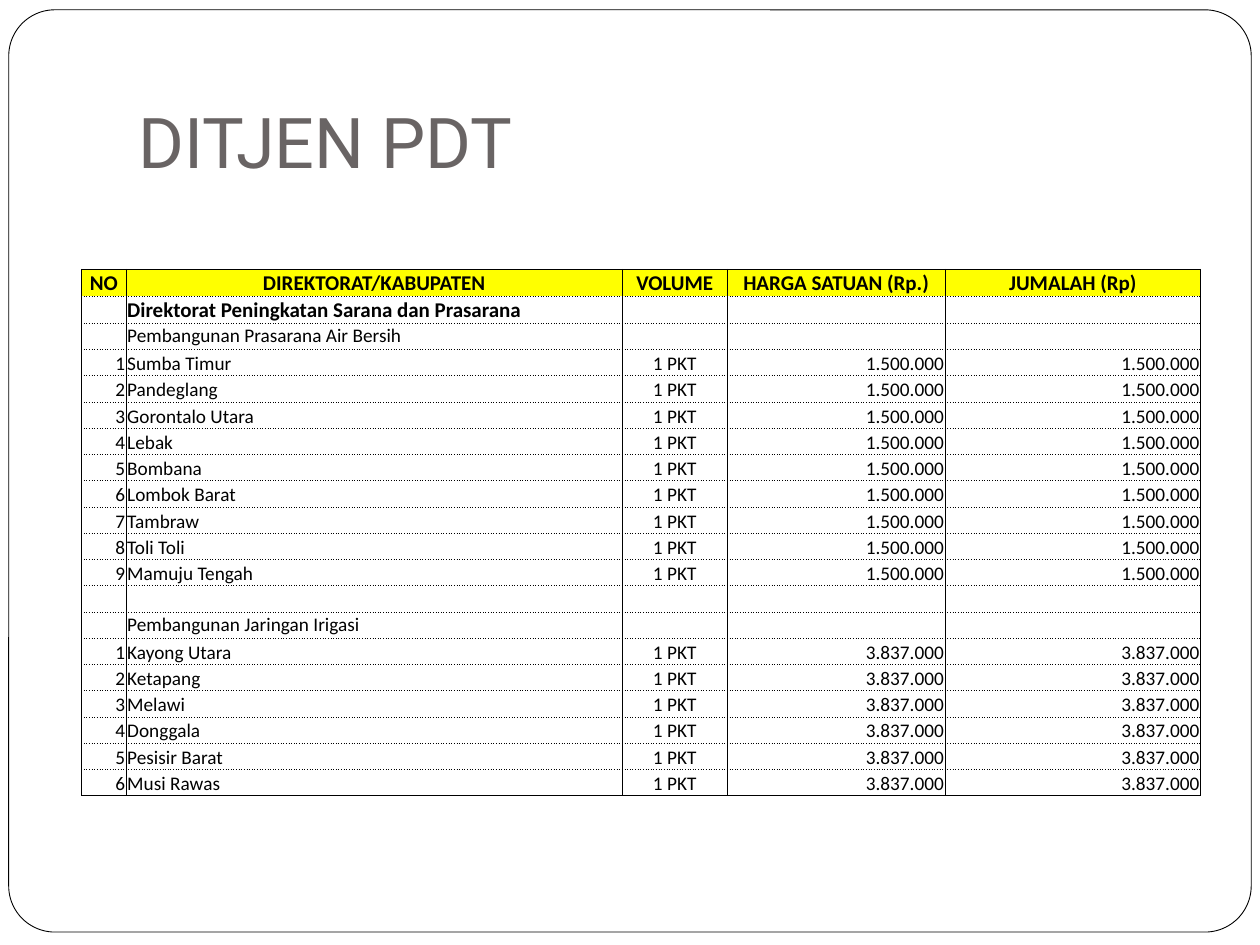
from lxml.etree import SubElement
from pptx import Presentation
from pptx.dml.color import RGBColor
from pptx.enum.shapes import MSO_SHAPE
from pptx.enum.text import MSO_ANCHOR as ANCHOR, PP_ALIGN as ALIGN
from pptx.oxml.ns import qn
from pptx.util import Pt

BLACK = RGBColor(0x00, 0x00, 0x00)
WHITE = RGBColor(0xFF, 0xFF, 0xFF)
YELLOW = RGBColor(0xFF, 0xFF, 0x00)
GRAY = RGBColor(0x69, 0x64, 0x64)


def set_attrs(obj, values):
    for name, value in values.items():
        setattr(obj, name, value)


def add_border(cell, side, dash):
    ln = SubElement(cell._tc.get_or_add_tcPr(), qn(f"a:{side}"), w=str(Pt(0.5)))
    fill = SubElement(ln, qn("a:solidFill"))
    SubElement(fill, qn("a:srgbClr"), val=str(BLACK))
    SubElement(ln, qn("a:prstDash"), val=dash)


prs = Presentation()
prs.slide_width, prs.slide_height = Pt(720), Pt(540)
s = prs.slides.add_slide(prs.slide_layouts[5])

frame = s.shapes.add_shape(MSO_SHAPE.ROUNDED_RECTANGLE, Pt(5), Pt(5.6), Pt(710), Pt(527))
frame.adjustments[0] = 0.05
frame.shadow.inherit = False
frame.fill.solid()
frame.fill.fore_color.rgb = WHITE
frame.line.color.rgb = BLACK
frame.line.width = Pt(0.5)
s.shapes._spTree.insert(2, frame._element)

title = s.shapes.title
set_attrs(title, {"left": Pt(72), "top": Pt(21.6), "width": Pt(612), "height": Pt(90)})
tf = title.text_frame
set_attrs(tf, {"vertical_anchor": ANCHOR.BOTTOM, "word_wrap": True,
               "margin_left": Pt(7.2), "margin_right": Pt(7.2),
               "margin_top": Pt(3.6), "margin_bottom": Pt(7.2)})
p = tf.paragraphs[0]
p.alignment = ALIGN.LEFT
r = p.add_run()
r.text = "DITJEN PDT"
set_attrs(r.font, {"name": "Roboto", "size": Pt(40)})
r.font.color.rgb = GRAY

headers = ["NO", "DIREKTORAT/KABUPATEN", "VOLUME", "HARGA SATUAN (Rp.)", "JUMALAH (Rp)"]
groups = [
    ("Pembangunan Prasarana Air Bersih", "1.500.000",
     ["Sumba Timur", "Pandeglang", "Gorontalo Utara", "Lebak", "Bombana",
      "Lombok Barat", "Tambraw", "Toli Toli", "Mamuju Tengah"]),
    ("Pembangunan Jaringan Irigasi", "3.837.000",
     ["Kayong Utara", "Ketapang", "Melawi", "Donggala", "Pesisir Barat", "Musi Rawas"]),
]
blank = [""] * 5
rows = [(headers, ANCHOR.MIDDLE),
        (["", "Direktorat Peningkatan Sarana dan Prasarana", "", "", ""], ANCHOR.MIDDLE)]
for i, (heading, price, places) in enumerate(groups):
    if i:
        rows.append((blank, ANCHOR.BOTTOM))
    rows.append((["", heading, "", "", ""], ANCHOR.TOP))
    for number, place in enumerate(places, 1):
        rows.append(([str(number), place, "1 PKT", price, price], ANCHOR.BOTTOM))

widths = [25.5, 283.5, 60, 124.5, 146]
heights = [15.5, 15.4] + [15] * (len(rows) - 2)
aligns = [ALIGN.RIGHT, ALIGN.LEFT, ALIGN.CENTER, ALIGN.RIGHT, ALIGN.RIGHT]
table = s.shapes.add_table(len(rows), len(widths), Pt(46.6), Pt(153.9),
                           Pt(sum(widths)), Pt(sum(heights))).table
set_attrs(table, {"first_row": False, "horz_banding": False})
for col, width in zip(table.columns, widths):
    col.width = Pt(width)

for i, (texts, anchor) in enumerate(rows):
    table.rows[i].height = Pt(heights[i])
    is_header, is_last, bold = i == 0, i == len(rows) - 1, i < 2
    for j, text in enumerate(texts):
        cell = table.cell(i, j)
        set_attrs(cell, {"vertical_anchor": anchor, "margin_left": Pt(0.6),
                         "margin_right": Pt(0.6), "margin_top": Pt(0.6), "margin_bottom": 0})
        add_border(cell, "lnL", "solid")
        add_border(cell, "lnR", "solid")
        add_border(cell, "lnT", "solid" if is_header else "dot")
        add_border(cell, "lnB", "solid" if is_last else "dot")
        if is_header:
            cell.fill.solid()
            cell.fill.fore_color.rgb = YELLOW
        else:
            cell.fill.background()
        p = cell.text_frame.paragraphs[0]
        p.alignment = ALIGN.CENTER if is_header else aligns[j]
        if text:
            r = p.add_run()
            r.text = text
            set_attrs(r.font, {"name": "Calibri", "size": Pt(12 if bold else 11), "bold": bold})
            r.font.color.rgb = BLACK
        else:
            SubElement(p._p, qn("a:endParaRPr"), sz="1100")

prs.save("out.pptx")
